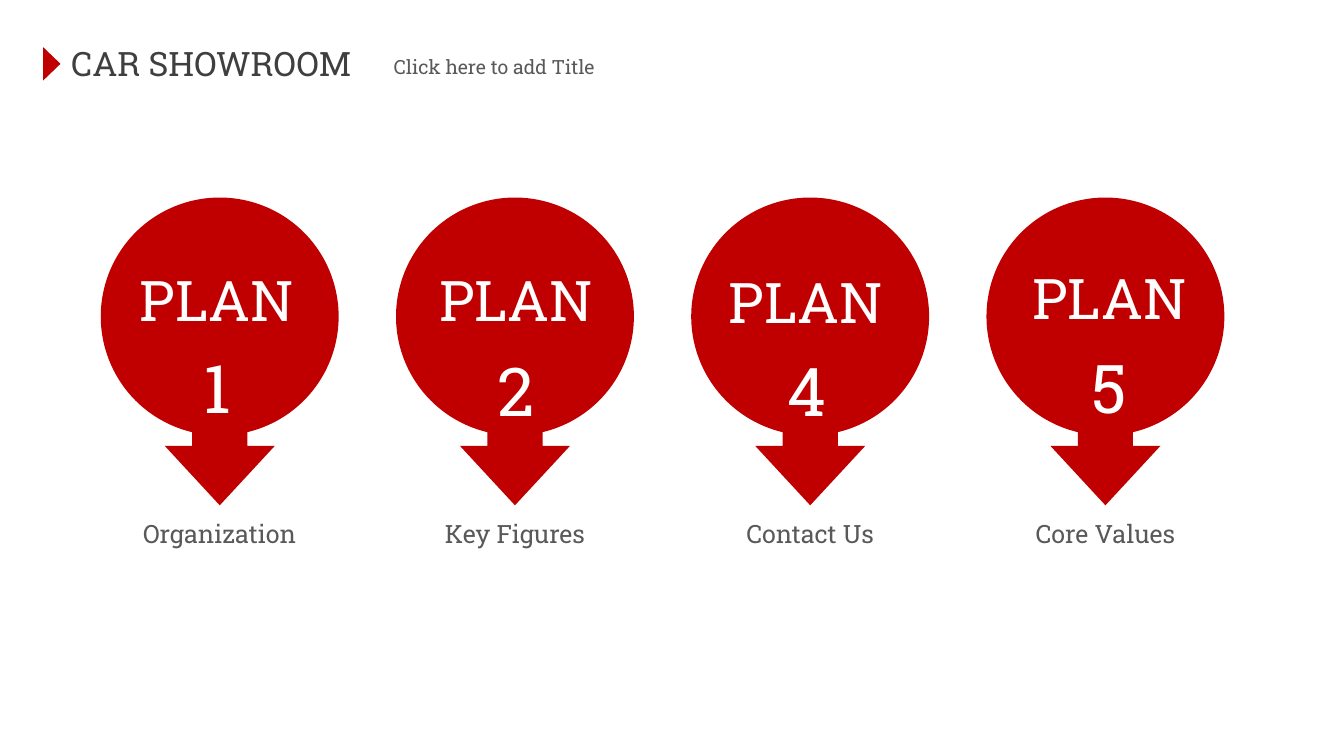
from pptx import Presentation
from pptx.dml.color import RGBColor
from pptx.enum.shapes import MSO_SHAPE
from pptx.enum.text import MSO_ANCHOR, MSO_AUTO_SIZE, PP_ALIGN
from pptx.util import Inches, Pt

# Content
TITLE = "CAR SHOWROOM"
SUBTITLE = "Click here to add Title"
# number, caption, (x, y) of the word, (x, y) of the number;
# x is the nudge from the circle's left edge
PLANS = [
    ("1", "Organization", (-0.02, 1.93), (-0.02, 2.53)),
    ("2", "Key Figures", (0.01, 1.93), (0.01, 2.55)),
    ("4", "Contact Us", (-0.03, 1.94), (-0.02, 2.55)),
    ("5", "Core Values", (0.03, 1.91), (0.03, 2.53)),
]

# Style and grid
FONT = "Roboto Slab"
RED, WHITE, DARK, GREY = "C00000", "FFFFFF", "3F3F3F", "595959"
SLIDE_W = 10
SLIDE_H = SLIDE_W * 9 / 16
LEFT, RIGHT, TOP, DIAMETER = 0.75, 7.34, 1.47, 1.77
PITCH = (RIGHT - LEFT) / (len(PLANS) - 1)
ARROW_W, ARROW_H, ARROW_TOP = 0.82, 1.05, 2.71


def rgb(hex_color):
    return RGBColor.from_string(hex_color)


def box(x, y, w, h):
    return [Inches(v) for v in (x, y, w, h)]


def add_red_shape(shapes, kind, x, y, w, h):
    s = shapes.add_shape(kind, *box(x, y, w, h))
    s.shadow.inherit = False
    s.fill.solid()
    s.fill.fore_color.rgb = rgb(RED)
    s.line.fill.background()
    return s


def write(s, text, size, color, align=PP_ALIGN.LEFT):
    tf = s.text_frame
    tf.word_wrap = True
    tf.auto_size = MSO_AUTO_SIZE.NONE
    tf.vertical_anchor = MSO_ANCHOR.TOP
    p = tf.paragraphs[0]
    p.alignment = align
    r = p.add_run()
    r.text = text
    r.font.name = FONT
    r.font.size = Pt(size)
    r.font.color.rgb = rgb(color)


def add_label(shapes, text, x, y, h, size, color):
    s = shapes.add_textbox(*box(x, y, DIAMETER, h))
    write(s, text, size, color, PP_ALIGN.CENTER)


prs = Presentation()
prs.slide_width, prs.slide_height = Inches(SLIDE_W), Inches(SLIDE_H)
slide = prs.slides.add_slide(prs.slide_layouts[5])

# Heading: title, red marker and subtitle
title = slide.shapes.title
title.left, title.top, title.width, title.height = box(0.43, 0.27, 2.3, 0.4)
write(title, TITLE, 18, DARK)

marker = add_red_shape(slide.shapes, MSO_SHAPE.ISOSCELES_TRIANGLE, 0.26, 0.41, 0.25, 0.13)
marker.rotation = 90

subtitle = slide.shapes.add_textbox(*box(2.76, 0.36, 1.83, 0.28))
subtitle.text_frame.margin_left = Inches(0.17)
write(subtitle, SUBTITLE, 10.5, GREY)

# Plans: circle, arrow and labels, one group each
for i, (number, caption, (word_dx, word_y), (num_dx, num_y)) in enumerate(PLANS):
    x = LEFT + i * PITCH
    shapes = slide.shapes.add_group_shape().shapes
    add_red_shape(shapes, MSO_SHAPE.OVAL, x, TOP, DIAMETER, DIAMETER)
    arrow = add_red_shape(shapes, MSO_SHAPE.DOWN_ARROW, x + (DIAMETER - ARROW_W) / 2,
                          ARROW_TOP, ARROW_W, ARROW_H)
    arrow.adjustments[1] = 0.54
    add_label(shapes, "PLAN", x + word_dx, word_y, 0.61, 30, WHITE)
    add_label(shapes, number, x + num_dx, num_y, 0.71, 36, WHITE)
    add_label(shapes, caption, x, 3.81, 0.33, 13.5, GREY)

prs.save("out.pptx")
